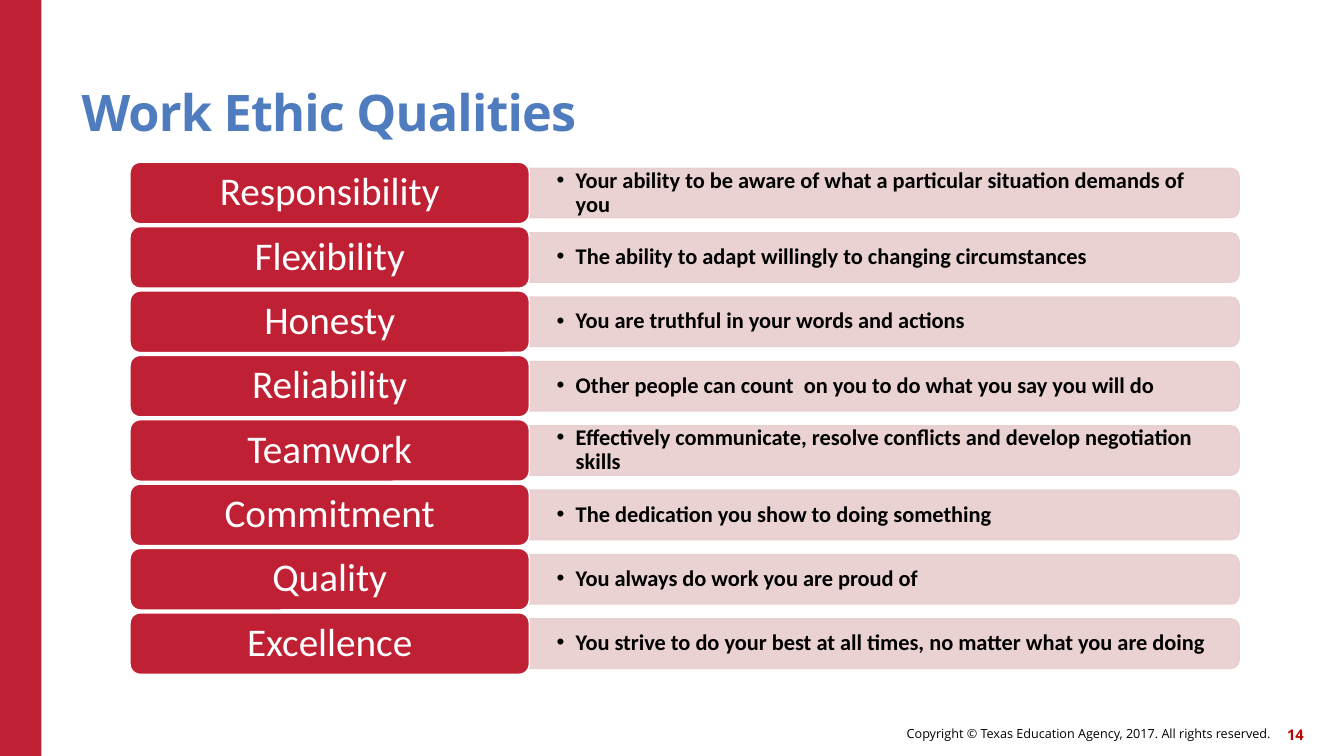
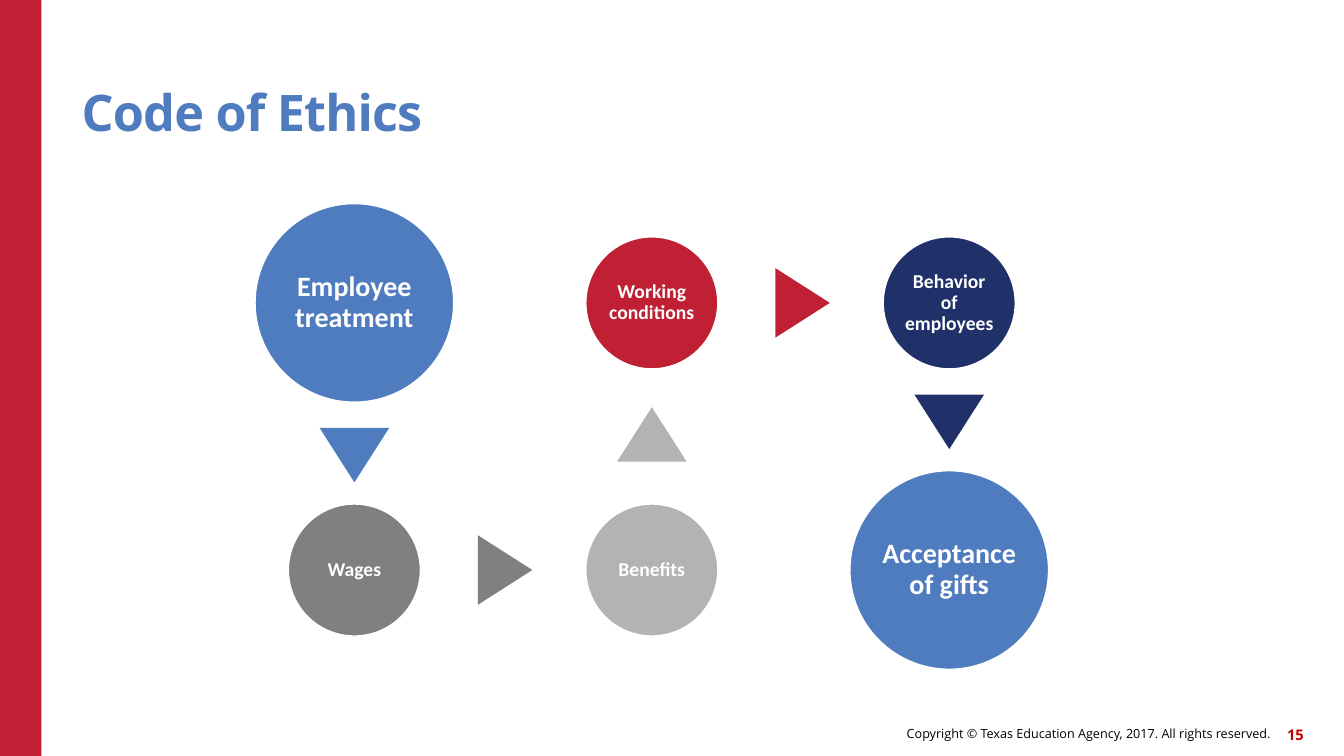
from lxml import etree
from pptx import Presentation
from pptx.dml.color import RGBColor
from pptx.enum.shapes import MSO_SHAPE
from pptx.enum.text import MSO_ANCHOR, PP_ALIGN
from pptx.oxml.ns import qn
from pptx.util import Emu, Pt

RECT, ELLIPSE = MSO_SHAPE.RECTANGLE, MSO_SHAPE.OVAL
LABEL, TAB = MSO_SHAPE.ROUNDED_RECTANGLE, MSO_SHAPE.ROUND_2_SAME_RECTANGLE
TRIANGLE = MSO_SHAPE.ISOSCELES_TRIANGLE
LEFT, CENTER, RIGHT = PP_ALIGN.LEFT, PP_ALIGN.CENTER, PP_ALIGN.RIGHT
MIDDLE, BOTTOM = MSO_ANCHOR.MIDDLE, MSO_ANCHOR.BOTTOM

RED, PINK, BLUE, NAVY = "C02033", "E8CDCE", "4E7CBE", "203069"
GREY, SILVER, WHITE, BLACK, NUMBER_RED = "808080", "B3B3B3", "FFFFFF", "000000", "C00000"

EMU_PER_PX = 9144
SLIDE_W, SLIDE_H = 1333, 750

TITLE = {"name": "Open Sans", "size": Pt(36), "bold": True}
COPYRIGHT = {"name": "Open Sans", "size": Pt(9)}
NUMBER = {"name": "Open Sans", "size": Pt(10.5), "bold": True}
QUALITY = {"name": "Calibri", "size": Pt(28)}
MEANING = {"name": "Calibri", "size": Pt(16), "bold": True}
BIG_STEP = {"name": "Calibri", "size": Pt(20), "bold": True}
SMALL_STEP = {"name": "Calibri", "size": Pt(14), "bold": True}

QUALITIES = [
    ("Responsibility", "Your ability to be aware of what a particular situation demands of you"),
    ("Flexibility", "The ability to adapt willingly to changing circumstances"),
    ("Honesty", "You are truthful in your words and actions"),
    ("Reliability", "Other people can count  on you to do what you say you will do"),
    ("Teamwork", "Effectively communicate, resolve conflicts and develop negotiation skills"),
    ("Commitment", "The dedication you show to doing something"),
    ("Quality", "You always do work you are proud of"),
    ("Excellence", "You strive to do your best at all times, no matter what you are doing"),
]

# text, column, row, colour
STEPS = [
    ("Employee treatment", 0, 0, BLUE),
    ("Wages", 0, 1, GREY),
    ("Benefits", 1, 1, SILVER),
    ("Working conditions", 1, 0, RED),
    ("Behavior of employees", 2, 0, NAVY),
    ("Acceptance of gifts", 2, 1, BLUE),
]


def px(n):
    return Emu(round(n * EMU_PER_PX))


def rgb(color):
    return RGBColor.from_string(color)


def write(s, text, fmt, color, align=LEFT, anchor=MIDDLE, inset=(0, 0), spacing=None):
    tf = s.text_frame
    tf.word_wrap = True
    tf.vertical_anchor = anchor
    tf.margin_left = tf.margin_right = px(inset[0])
    tf.margin_top = tf.margin_bottom = px(inset[1])
    p = tf.paragraphs[0]
    p.alignment = align
    if spacing:
        p.line_spacing = spacing
    r = p.add_run()
    r.text = text
    for name, value in fmt.items():
        setattr(r.font, name, value)
    r.font.color.rgb = rgb(color)
    return p


def add_text(sp, box, *args, **kwargs):
    s = sp.add_textbox(*map(px, box))
    return write(s, *args, **kwargs)


def add_shape(sp, kind, box, fill, line=None, rotation=0):
    s = sp.add_shape(kind, *map(px, box))
    s.shadow.inherit = False
    s.rotation = rotation
    s.fill.solid()
    s.fill.fore_color.rgb = rgb(fill)
    if line:
        s.line.color.rgb = rgb(line)
        s.line.width = Pt(1)
    else:
        s.line.fill.background()
    return s


def centred(cx, cy, w, h):
    """Box of the given size around a centre."""
    return cx - w / 2, cy - h / 2, w, h


def set_alpha(s, percent):
    for clr in s.element.spPr.iter(qn("a:srgbClr")):
        etree.SubElement(clr, qn("a:alpha"), val=str(percent * 1000))


def add_bullet(p, indent):
    pPr = p._p.get_or_add_pPr()
    pPr.set("marL", str(px(indent)))
    pPr.set("indent", str(-px(indent)))
    etree.SubElement(pPr, qn("a:buFont"), typeface="Arial")
    etree.SubElement(pPr, qn("a:buChar"), char="•")


def add_base(prs, title, number):
    """Add a slide with the side band, footer and title; return its shapes."""
    sp = prs.slides.add_slide(prs.slide_layouts[6]).shapes
    add_shape(sp, RECT, (0, 0, 41, SLIDE_H), RED)
    add_text(sp, (614, 712, 646, 32),
             "Copyright © Texas Education Agency, 2017. All rights reserved.",
             COPYRIGHT, BLACK, RIGHT)
    add_text(sp, (1251, 713, 42, 32), str(number), NUMBER, NUMBER_RED, RIGHT)
    p = add_text(sp, (81, 45, 1100, 96), title, TITLE, BLUE, anchor=BOTTOM, spacing=0.9)
    p.runs[0].font._element.set("spc", "-60")
    return sp


def add_quality(sp, box, quality, meaning):
    """One row: a red label with a tinted bar to its right."""
    x, y, w, h = box
    label_w, bar_h, text_h = 396, 49, 44
    bar_x, bar_w = x + label_w, w - label_w
    cy = y + h / 2
    bar = add_shape(sp, TAB, centred(bar_x + bar_w / 2, cy, bar_h, bar_w), PINK, PINK, 90)
    set_alpha(bar, 90)
    p = add_text(sp, (bar_x, cy - text_h / 2, bar_w - 2, text_h), meaning, MEANING, BLACK,
                 inset=(27, 14), spacing=0.9)
    add_bullet(p, 19)
    label = add_shape(sp, LABEL, (x, y, label_w, h), RED, WHITE)
    write(label, quality, QUALITY, WHITE, CENTER, inset=(12, 6), spacing=0.9)


def add_quality_list(sp, box):
    x, y, w, h = box
    row_h = 61
    pitch = (h - row_h) / (len(QUALITIES) - 1)
    for i, (quality, meaning) in enumerate(QUALITIES):
        add_quality(sp, (x, y + i * pitch, w, row_h), quality, meaning)


def add_arrow(sp, start, end, color):
    """Triangle in the gap between two circles, each given as (cx, cy, diameter)."""
    (x1, y1, d1), (x2, y2, d2) = start, end
    dx, dy = (x2 > x1) - (x2 < x1), (y2 > y1) - (y2 < y1)
    shift = (d1 - d2) / 4 + 2
    cx, cy = (x1 + x2) / 2 + dx * shift, (y1 + y2) / 2 + dy * shift
    rotation = 90 if dx else 90 + 90 * dy
    add_shape(sp, TRIANGLE, centred(cx, cy, 69, 54), color, rotation=rotation)


def add_step_flow(sp, box):
    """Snaking chain of circles; the first and the last are large."""
    x, y, w, h = box
    big, small = 197, 131
    col_pitch, row_pitch = (w - big) / 2, h - big
    circles = []
    for i, (text, col, row, color) in enumerate(STEPS):
        is_big = i in (0, len(STEPS) - 1)
        d = big if is_big else small
        cx, cy = x + big / 2 + col * col_pitch, y + big / 2 + row * row_pitch
        circles.append((cx, cy, d))
        s = add_shape(sp, ELLIPSE, centred(cx, cy, d, d), color, WHITE)
        inset = 3 if is_big else 2
        write(s, text, BIG_STEP if is_big else SMALL_STEP, WHITE, CENTER,
              inset=(inset, inset), spacing=0.9)
    for start, end, step in zip(circles, circles[1:], STEPS):
        add_arrow(sp, start, end, step[3])


def main():
    prs = Presentation()
    prs.slide_width, prs.slide_height = px(SLIDE_W), px(SLIDE_H)
    add_quality_list(add_base(prs, "Work Ethic Qualities", 14), (129, 161, 1100, 508))
    add_step_flow(add_base(prs, "Code of Ethics", 15), (253, 202, 787, 462))
    prs.save("out.pptx")


if __name__ == "__main__":
    main()
